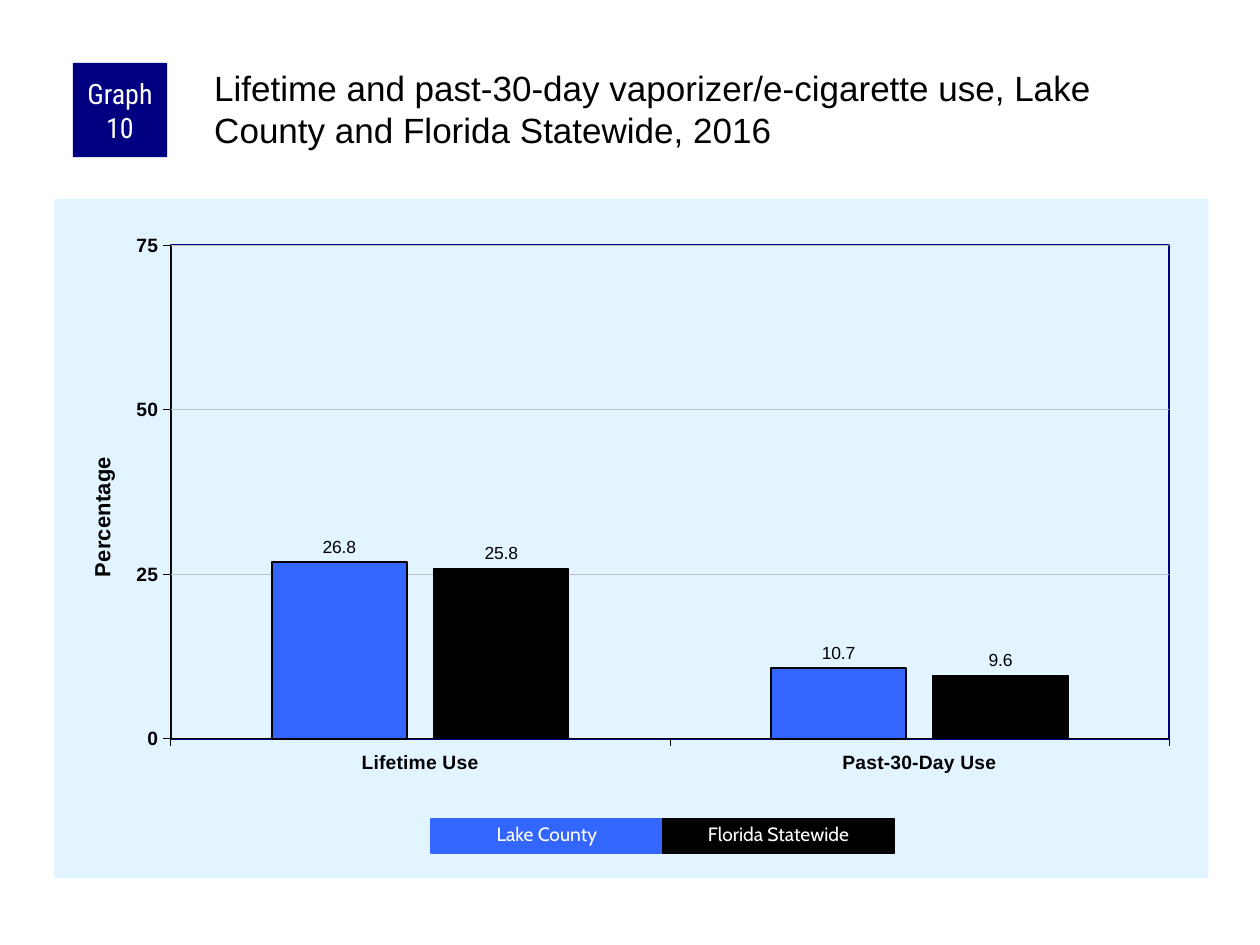
from dataclasses import dataclass

from lxml import etree
from pptx import Presentation, util as u
from pptx.chart.data import CategoryChartData
from pptx.dml.color import RGBColor
from pptx.enum import chart as ch, shapes, text
from pptx.oxml import parse_xml
from pptx.oxml.ns import nsdecls, qn

NAVY, BLUE, BLACK, WHITE = "000080", "3366FF", "000000", "FFFFFF"
PALE, GREY = "E1F4FF", "C0C0C0"


@dataclass
class Series:
    name: str
    label: str
    values: tuple[float, ...]
    color: str
    line_width: float


@dataclass
class Box:
    label: str
    left: float
    top: float
    width: float
    height: float
    color: str
    font: str
    size: float


SERIES = [
    Series("Series 1", "Lake County", (26.8, 10.7), BLUE, 1),
    Series("Series 2", "Florida Statewide", (25.8, 9.6), BLACK, 0.75),
]


def rgb(color: str) -> RGBColor:
    return RGBColor.from_string(color)


def set_font(font, name: str, size: float, color: str, bold: bool = False) -> None:
    font.name, font.size, font.bold = name, u.Pt(size), bold
    font.color.rgb = rgb(color)


def set_line(line, color: str, width: float) -> None:
    line.color.rgb = rgb(color)
    line.width = u.Pt(width)


def set_layout(parent, index: int, **places: float) -> None:
    for old in parent.findall(qn("c:layout")):
        parent.remove(old)
    layout = parse_xml(f"<c:layout {nsdecls('c')}><c:manualLayout/></c:layout>")
    values = {"layoutTarget": "inner"} if "w" in places else {}
    values |= {"xMode": "edge", "yMode": "edge"} | places
    for tag, value in values.items():
        etree.SubElement(layout[0], qn(f"c:{tag}")).set("val", str(value))
    parent.insert(index, layout)


def shape_properties(fill: str, line: str):
    return parse_xml(f"<c:spPr {nsdecls('c', 'a')}>{fill}<a:ln w='12700'>{line}</a:ln></c:spPr>")


def solid(color: str) -> str:
    return f'<a:solidFill><a:srgbClr val="{color}"/></a:solidFill>'


def style_axis(axis) -> None:
    axis.major_tick_mark = ch.XL_TICK_MARK.OUTSIDE
    axis.minor_tick_mark = ch.XL_TICK_MARK.NONE
    set_font(axis.tick_labels.font, "Arial", 11, BLACK, True)
    set_line(axis.format.line, BLACK, 0.25)


def add_column_chart(slide) -> None:
    data = CategoryChartData(number_format="0.0")
    data.categories = ["Lifetime Use", "Past-30-Day Use"]
    for s in SERIES:
        data.add_series(s.name, s.values)
    chart = slide.shapes.add_chart(
        ch.XL_CHART_TYPE.COLUMN_CLUSTERED,
        u.Cm(1.09), u.Cm(4.01), u.Cm(23.27), u.Cm(13.69), data).chart
    chart.has_legend = chart.has_title = False
    set_font(chart.font, "Arial", 11.5, BLACK)

    space = chart.element
    space.chart.addnext(shape_properties(solid(PALE), "<a:noFill/>"))
    area = space.chart.plotArea
    set_layout(area, 0, x=0.101, y=0.068, w=0.865, h=0.727)
    area.append(shape_properties("<a:noFill/>", solid(NAVY)))

    plot = chart.plots[0]
    plot.gap_width, plot.overlap, plot.vary_by_categories = 150, -20, False
    for s, series in zip(SERIES, plot.series):
        series.invert_if_negative = False
        series.format.fill.solid()
        series.format.fill.fore_color.rgb = rgb(s.color)
        set_line(series.format.line, BLACK, s.line_width)
        labels = series.data_labels
        labels.show_value = True
        labels.number_format, labels.number_format_is_linked = "0.0", False
        labels.position = ch.XL_LABEL_POSITION.OUTSIDE_END
        set_font(labels.font, "Arial", 10, BLACK)

    style_axis(chart.category_axis)
    axis = chart.value_axis
    style_axis(axis)
    axis.minimum_scale, axis.maximum_scale, axis.major_unit = 0, 75, 25
    axis.tick_labels.number_format = "0"
    axis.tick_labels.number_format_is_linked = False
    axis.has_major_gridlines = True
    set_line(axis.major_gridlines.format.line, GREY, 0.25)
    tf = axis.axis_title.text_frame
    tf.text = "Percentage"
    set_font(tf.paragraphs[0].font, "Arial", 12.5, BLACK, True)
    set_layout(axis.axis_title._element, 1, x=0.026, y=0.374)


def add_box(slide, box: Box):
    sp = slide.shapes.add_shape(
        shapes.MSO_SHAPE.RECTANGLE,
        u.Cm(box.left), u.Cm(box.top), u.Cm(box.width), u.Cm(box.height))
    sp.shadow.inherit = False
    sp.fill.solid()
    sp.fill.fore_color.rgb = rgb(box.color)
    sp.line.fill.background()
    tf = sp.text_frame
    tf.word_wrap = True
    tf.text = box.label
    p = tf.paragraphs[0]
    p.alignment = text.PP_ALIGN.CENTER
    set_font(p.font, box.font, box.size, WHITE)
    return sp


def add_badge(slide) -> None:
    tf = add_box(slide, Box("Graph 10", 1.47, 1.27, 1.9, 1.9, NAVY, "Roboto Condensed", 16)).text_frame
    tf.margin_left = tf.margin_right = u.Cm(0.13)
    tf.margin_top = tf.margin_bottom = 0
    tf.vertical_anchor = text.MSO_ANCHOR.MIDDLE


def add_title(slide) -> None:
    tf = slide.shapes.add_textbox(u.Cm(4.24), u.Cm(1.27), u.Cm(20.12), u.Cm(2.11)).text_frame
    tf.word_wrap = True
    tf.margin_left = tf.margin_top = u.Cm(0.08)
    tf.margin_right = tf.margin_bottom = 0
    tf.text = ("Lifetime and past-30-day vaporizer/e-cigarette use, "
               "Lake County and Florida Statewide, 2016")
    set_font(tf.paragraphs[0].font, "Arial", 20, BLACK)


def add_legend(slide) -> None:
    width = 4.67
    for i, s in enumerate(SERIES):
        sp = add_box(slide, Box(s.label, 8.69 + i * width, 16.51, width, 0.69, s.color, "Cabin", 11))
        set_line(sp.line, s.color, 0.75)
        tf = sp.text_frame
        tf.auto_size = text.MSO_AUTO_SIZE.SHAPE_TO_FIT_TEXT
        tf.vertical_anchor = text.MSO_ANCHOR.TOP
        tf.paragraphs[0].line_spacing = 0.9


def main() -> None:
    prs = Presentation()
    prs.slide_width, prs.slide_height = u.Cm(25.4), u.Cm(19.05)
    slide = prs.slides.add_slide(prs.slide_layouts[6])
    add_column_chart(slide)
    add_badge(slide)
    add_title(slide)
    add_legend(slide)
    prs.save("out.pptx")


if __name__ == "__main__":
    main()
